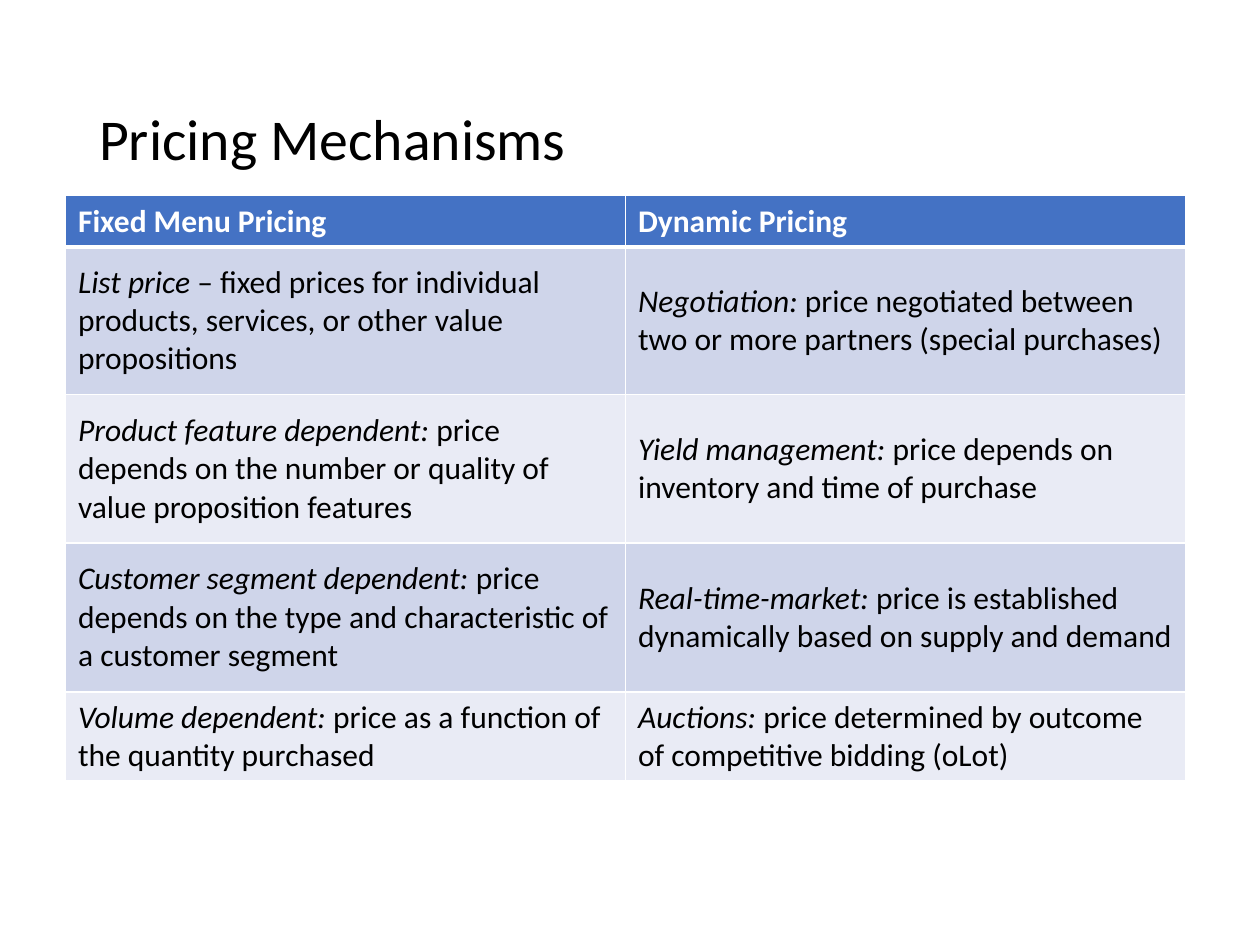
from lxml import etree
from pptx import Presentation
from pptx.dml.color import RGBColor
from pptx.enum import text
from pptx.oxml.ns import qn
from pptx.util import Cm, Pt

FONT = "Calibri"
BLACK, WHITE = "000000", "FFFFFF"
HEADER_FILL, BAND_FILLS = "4472C4", ("CFD5EA", "E9EBF5")
ROW_HEIGHTS = (1.04, 2.97, 3, 3, 1.04)
COLUMN_WIDTH = 11.29

HEADINGS = ("Fixed Menu Pricing", "Dynamic Pricing")
MECHANISMS = (
    (("List price", " – fixed prices for individual products, services, or other value propositions"),
     ("Negotiation:", " price negotiated between two or more partners (special purchases)")),
    (("Product feature dependent:", " price depends on the number or quality of value proposition features"),
     ("Yield management:", " price depends on inventory and time of purchase")),
    (("Customer segment dependent: ", "price depends on the type and characteristic of a customer segment"),
     ("Real-time-market: ", "price is established dynamically based on supply and demand")),
    (("Volume dependent: ", "price as a function of the quantity purchased"),
     ("Auctions:", " price determined by outcome of competitive bidding (oLot)")),
)


def color(value):
    return RGBColor.from_string(value)


def add_span(para, words, size=18, ink=BLACK, bold=False, italic=False):
    span = para.add_run()
    span.text = words
    font = span.font
    font.name, font.size, font.bold, font.italic = FONT, Pt(size), bold, italic
    font.color.rgb = color(ink)


def add_title(page, words):
    box = page.shapes.add_textbox(Cm(1.75), Cm(1.02), Cm(21.89), Cm(3.68))
    frame = box.text_frame
    frame.word_wrap = True
    frame.vertical_anchor = text.MSO_ANCHOR.MIDDLE
    para = frame.paragraphs[0]
    para.line_spacing = 0.9
    add_span(para, words, size=33)


def add_borders(cell, **widths):
    """Draw white cell borders, 1 pt unless a side is given another width."""
    properties = cell._tc.get_or_add_tcPr()
    for side in "LRTB":
        line = etree.SubElement(properties, qn(f"a:ln{side}"), w=str(Pt(widths.get(side, 1))))
        fill = etree.SubElement(line, qn("a:solidFill"))
        etree.SubElement(fill, qn("a:srgbClr"), val=WHITE)


def format_cell(cell, fill, **border_widths):
    """Style the cell and return its paragraph, ready for text."""
    add_borders(cell, **border_widths)
    cell.fill.solid()
    cell.fill.fore_color.rgb = color(fill)
    cell.vertical_anchor = text.MSO_ANCHOR.MIDDLE
    para = cell.text_frame.paragraphs[0]
    para.space_before = para.space_after = Pt(6)
    return para


def add_pricing_table(page):
    table = page.shapes.add_table(
        len(ROW_HEIGHTS), len(HEADINGS), Cm(1.32), Cm(3.94),
        Cm(COLUMN_WIDTH * len(HEADINGS)), Cm(sum(ROW_HEIGHTS))).table
    for column in table.columns:
        column.width = Cm(COLUMN_WIDTH)
    for row, height in zip(table.rows, ROW_HEIGHTS):
        row.height = Cm(height)
    for col, heading in enumerate(HEADINGS):
        para = format_cell(table.cell(0, col), HEADER_FILL, B=3)
        add_span(para, heading, ink=WHITE, bold=True)
    for row, mechanisms in enumerate(MECHANISMS, start=1):
        for col, (term, meaning) in enumerate(mechanisms):
            para = format_cell(table.cell(row, col), BAND_FILLS[(row - 1) % 2],
                               T=3 if row == 1 else 1)
            add_span(para, term, italic=True)
            add_span(para, meaning)


def main():
    deck = Presentation()
    deck.slide_width, deck.slide_height = Cm(25.4), Cm(19.05)
    page = deck.slides.add_slide(deck.slide_layouts[6])
    add_title(page, "Pricing Mechanisms")
    add_pricing_table(page)
    deck.save("out.pptx")


if __name__ == "__main__":
    main()
